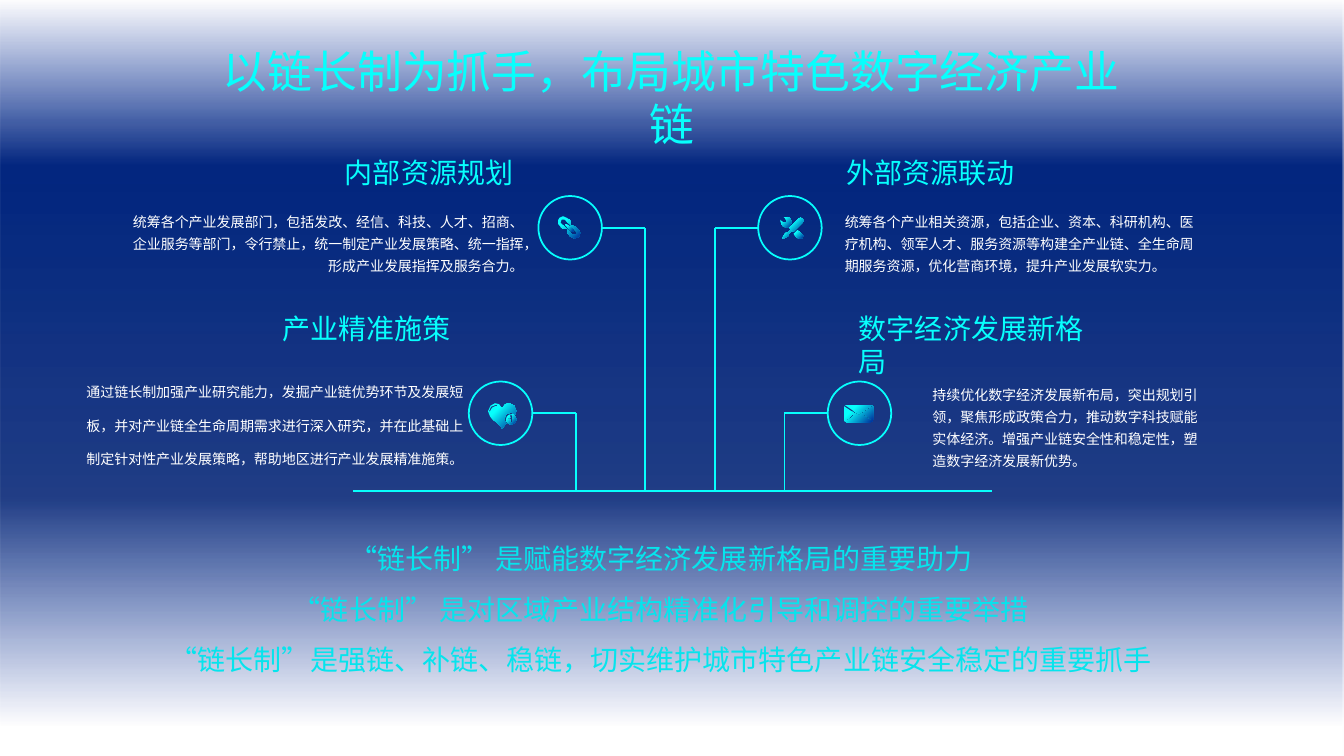
from math import cos, pi, sin

from lxml.etree import SubElement
from pptx import Presentation
from pptx.dml.color import RGBColor
from pptx.enum.shapes import MSO_CONNECTOR, MSO_SHAPE as Shape
from pptx.enum.text import MSO_AUTO_SIZE, PP_ALIGN as Align
from pptx.oxml.ns import qn
from pptx.util import Inches, Pt

CYAN = RGBColor(0x07, 0xFF, 0xFD)
TEAL = RGBColor(0x06, 0xE4, 0xED)
BLUE = RGBColor(0x00, 0x2B, 0x9B)
NAVY = RGBColor(0x03, 0x26, 0x7F)
DEEP_NAVY = RGBColor(0x04, 0x25, 0x76)
WHITE = RGBColor(0xFF, 0xFF, 0xFF)
CJK_FONT, LATIN_FONT = "Noto Sans CJK SC", "Arial"

WIDTH, HEIGHT = 13.33, 7.5
BASE_LINE = (3.5, 9.84, 4.87)  # left, right, height
FIRST_STEM, STEM_GAP, ARM, RING = 5.71, 0.69, 0.43, 0.63
HIGH, LOW = 2.26, 4.1
BRANCHES = [(LOW, -1), (HIGH, -1), (HIGH, 1), (LOW, 1)]  # height, side of each stem

# Gradient stops: position %, colour, opacity %
BACKDROP_STOPS = [(0, BLUE, 0), (22, NAVY, 100), (66, DEEP_NAVY, 88), (96, BLUE, 0)]
ICON_STOPS = [(30, CYAN, 100), (100, BLUE, 100)]
TITLE_STOPS = [(52, CYAN, 100), (100, BLUE, 40)]

HEADING = {"size": 20, "color": CYAN, "font": LATIN_FONT, "wrap": False}
BODY = {"size": 10, "color": WHITE, "font": LATIN_FONT, "spacing": 1.3}
RIGHT = {"align": Align.RIGHT}
CENTER = {"align": Align.CENTER, "font": CJK_FONT}

# Box (left, top, width, height), paragraphs, format
TEXTS = [
    ((8.3, 1.49, 1.87, 0.44), ["外部资源联动"], HEADING),
    ((8.28, 2.02, 3.71, 0.76),
     ["统筹各个产业相关资源，包括企业、资本、科研机构、医疗机构、领军人才、服务资源等构建全产业链、"
      "全生命周期服务资源，优化营商环境，提升产业发展软实力。"], BODY),
    ((3.32, 1.49, 1.87, 0.44), ["内部资源规划"], HEADING | RIGHT),
    ((1.19, 2.02, 4.1, 0.76),
     ["统筹各个产业发展部门，包括发改、经信、科技、人才、招商、企业服务等部门，令行禁止，"
      "统一制定产业发展策略、统一指挥，形成产业发展指挥及服务合力。"], BODY | RIGHT),
    ((8.42, 3.04, 2.68, 0.44), ["数字经济发展新格局"], HEADING | {"wrap": True}),
    ((9.15, 3.74, 2.88, 0.97),
     ["持续优化数字经济发展新布局，突出规划引领，聚焦形成政策合力，推动数字科技赋能实体经济。"
      "增强产业链安全性和稳定性，塑造数字经济发展新优势。"], BODY),
    ((2.7, 3.04, 1.87, 0.44), ["产业精准施策"], HEADING | RIGHT),
    ((0.76, 3.59, 3.97, 1.11),
     ["通过链长制加强产业研究能力，发掘产业链优势环节及发展短板，并对产业链全生命周期需求进行深入研究，"
      "并在此基础上制定针对性产业发展策略，帮助地区进行产业发展精准施策。"], BODY | {"spacing": 2.0}),
    ((1.91, 0.38, 9.5, 0.64), ["以链长制为抓手，布局城市特色数字经济产业链"],
     CENTER | {"size": 32, "stops": TITLE_STOPS}),
    ((0.94, 5.16, 11.23, 1.61),
     ["“链长制” 是赋能数字经济发展新格局的重要助力",
      "“链长制” 是对区域产业结构精准化引导和调控的重要举措",
      "“链长制”是强链、补链、稳链，切实维护城市特色产业链安全稳定的重要抓手"],
     CENTER | {"size": 20, "color": TEAL, "spacing": 1.5}),
]


def circle(x, y, radius, count=24):
    return [(x + radius * cos(2 * pi * i / count), y + radius * sin(2 * pi * i / count))
            for i in range(count)]


# Icon outlines, each a list of closed contours
CHAIN_LINKS = [
    [(5.6, 2.18), (5.66, 2.23), (5.66, 2.2), (5.65, 2.18), (5.62, 2.16), (5.585, 2.145),
     (5.55, 2.16), (5.53, 2.195), (5.54, 2.23), (5.57, 2.26), (5.59, 2.27), (5.62, 2.27),
     (5.56, 2.21), (5.57, 2.18)],
    [(5.74, 2.28), (5.71, 2.25), (5.68, 2.24), (5.66, 2.24), (5.72, 2.3), (5.72, 2.33),
     (5.68, 2.33), (5.63, 2.28), (5.63, 2.31), (5.66, 2.35), (5.7, 2.365), (5.74, 2.35),
     (5.755, 2.315)],
]
CHAIN_PIN = [[(5.69, 2.28), (5.69, 2.29), (5.67, 2.3), (5.6, 2.23), (5.6, 2.22), (5.62, 2.22)]]
ENVELOPE = [
    [(8.66, 4.03), (8.54, 4.11), (8.52, 4.12), (8.49, 4.11), (8.37, 4.03), (8.37, 4.16),
     (8.38, 4.18), (8.4, 4.19), (8.63, 4.19), (8.65, 4.18), (8.66, 4.16)],
    [(8.47, 4.12), (8.4, 4.18), (8.39, 4.17), (8.46, 4.11)],
    [(8.64, 4.17), (8.63, 4.17), (8.56, 4.12), (8.57, 4.11), (8.64, 4.16)],
    [(8.52, 4.1), (8.53, 4.1), (8.65, 4.02), (8.39, 4.02), (8.38, 4.02), (8.5, 4.1)],
]
BADGE = [
    circle(5.07, 4.16, 0.05),
    [(5.1, 4.16), (5.08, 4.16), (5.08, 4.19), (5.06, 4.19), (5.06, 4.16), (5.04, 4.16),
     (5.04, 4.15), (5.06, 4.15), (5.06, 4.12), (5.08, 4.12), (5.08, 4.15), (5.1, 4.15)],
]
HEART = [
    [(5.05, 4), (5.01, 4.01), (4.98, 4.05), (4.95, 4.01), (4.91, 4), (4.865, 4.025),
     (4.84, 4.08), (4.86, 4.13), (4.9, 4.17), (4.95, 4.21), (4.98, 4.25), (5.02, 4.2),
     (5, 4.16), (5.02, 4.11), (5.07, 4.09), (5.11, 4.11), (5.12, 4.08), (5.1, 4.025)],
    [(4.93, 4.03), (4.91, 4.03), (4.88, 4.045), (4.86, 4.08), (4.85, 4.08), (4.87, 4.035),
     (4.91, 4.02), (4.93, 4.02)],
]
SCREWDRIVER_TIP = [[(7.81, 2.31), (7.79, 2.31), (7.76, 2.36), (7.77, 2.37), (7.82, 2.34),
                    (7.82, 2.32), (7.85, 2.29), (7.84, 2.28)]]
SCREWDRIVER_GRIP = [
    [(7.96, 2.17), (7.94, 2.16), (7.92, 2.17), (7.83, 2.26), (7.87, 2.3), (7.96, 2.21),
     (7.97, 2.19)],
    [(7.87, 2.25), (7.86, 2.25), (7.93, 2.18), (7.93, 2.19)],
    [(7.95, 2.2), (7.88, 2.27), (7.88, 2.26), (7.94, 2.2)],
]
WRENCH_HANDLE = [
    [(7.95, 2.32), (7.91, 2.28), (7.87, 2.32), (7.91, 2.36), (7.935, 2.37), (7.96, 2.36),
     (7.97, 2.34)],
    circle(7.935, 2.34, 0.01, 8),
]
WRENCH_HEAD = [[(7.8, 2.15), (7.77, 2.15), (7.8, 2.18), (7.8, 2.2), (7.79, 2.21), (7.77, 2.21),
                (7.74, 2.18), (7.74, 2.2), (7.76, 2.24), (7.8, 2.26), (7.84, 2.24),
                (7.85, 2.2), (7.84, 2.165)]]
ICONS = [CHAIN_LINKS, CHAIN_PIN, ENVELOPE, BADGE, HEART, SCREWDRIVER_TIP, SCREWDRIVER_GRIP,
         WRENCH_HANDLE, WRENCH_HEAD]


def set_gradient(properties, stops, angle, index):
    """Insert a linear gradient fill as the child at index; angle runs clockwise."""
    gradient = SubElement(properties, qn("a:gradFill"), rotWithShape="1")
    stop_list = SubElement(gradient, qn("a:gsLst"))
    for position, color, opacity in stops:
        stop = SubElement(stop_list, qn("a:gs"), pos=str(position * 1000))
        tint = SubElement(stop, qn("a:srgbClr"), val=str(color))
        if opacity < 100:
            SubElement(tint, qn("a:alpha"), val=str(opacity * 1000))
    SubElement(gradient, qn("a:lin"), ang=str(angle * 60000), scaled="0")
    properties.insert(index, gradient)


def fill_shape(shape, stops, angle):
    shape.shadow.inherit = False
    shape.line.fill.background()
    set_gradient(shape._element.spPr, stops, angle, 2)


def add_line(slide, x1, y1, x2, y2):
    line = slide.shapes.add_connector(MSO_CONNECTOR.STRAIGHT, *map(Inches, (x1, y1, x2, y2)))
    line.line.color.rgb = CYAN
    line.line.width = Pt(1.25)
    SubElement(line._element.spPr, qn("a:effectLst"))


def add_branch(slide, stem, height, side):
    """Draw a stem, its arm and the ring at the arm's end."""
    edge = stem + side * ARM
    add_line(slide, stem, BASE_LINE[2], stem, height)
    add_line(slide, stem, height, edge, height)
    left = edge if side > 0 else edge - RING
    ring = slide.shapes.add_shape(
        Shape.OVAL, *map(Inches, (left, height - RING / 2, RING, RING)))
    ring.shadow.inherit = False
    ring.fill.background()
    ring.line.color.rgb = CYAN
    ring.line.width = Pt(1.25)


def add_icon(slide, contours):
    outlines = [[(x * 1000, y * 1000) for x, y in contour] for contour in contours]
    builder = slide.shapes.build_freeform(*outlines[0][0], scale=Inches(1) / 1000)
    for number, outline in enumerate(outlines):
        if number:
            builder.move_to(*outline[0])
        builder.add_line_segments(outline[1:], close=True)
    fill_shape(builder.convert_to_shape(), ICON_STOPS, 45)


def add_text(slide, box, lines, style):
    frame = slide.shapes.add_textbox(*map(Inches, box)).text_frame
    frame.word_wrap = style.get("wrap", True)
    frame.auto_size = MSO_AUTO_SIZE.SHAPE_TO_FIT_TEXT
    for number, line in enumerate(lines):
        paragraph = frame.add_paragraph() if number else frame.paragraphs[0]
        paragraph.alignment = style.get("align", Align.LEFT)
        paragraph.line_spacing = style.get("spacing", 1.0)
        run = paragraph.add_run()
        run.text = line
        for name, value in {"name": style["font"], "size": Pt(style["size"])}.items():
            setattr(run.font, name, value)
        properties = run._r.get_or_add_rPr()
        SubElement(properties, qn("a:ea"), typeface=CJK_FONT)
        if "stops" in style:
            set_gradient(properties, style["stops"], 90, 0)
        else:
            run.font.color.rgb = style["color"]


def main():
    presentation = Presentation()
    presentation.slide_width, presentation.slide_height = Inches(WIDTH), Inches(HEIGHT)
    slide = presentation.slides.add_slide(presentation.slide_layouts[6])
    backdrop = slide.shapes.add_shape(Shape.RECTANGLE, 0, 0, Inches(WIDTH), Inches(HEIGHT))
    fill_shape(backdrop, BACKDROP_STOPS, 90)
    left, right, height = BASE_LINE
    add_line(slide, left, height, right, height)
    for number, (height, side) in enumerate(BRANCHES):
        add_branch(slide, FIRST_STEM + number * STEM_GAP, height, side)
    for contours in ICONS:
        add_icon(slide, contours)
    for box, lines, style in TEXTS:
        add_text(slide, box, lines, style)
    presentation.save("out.pptx")


if __name__ == "__main__":
    main()
